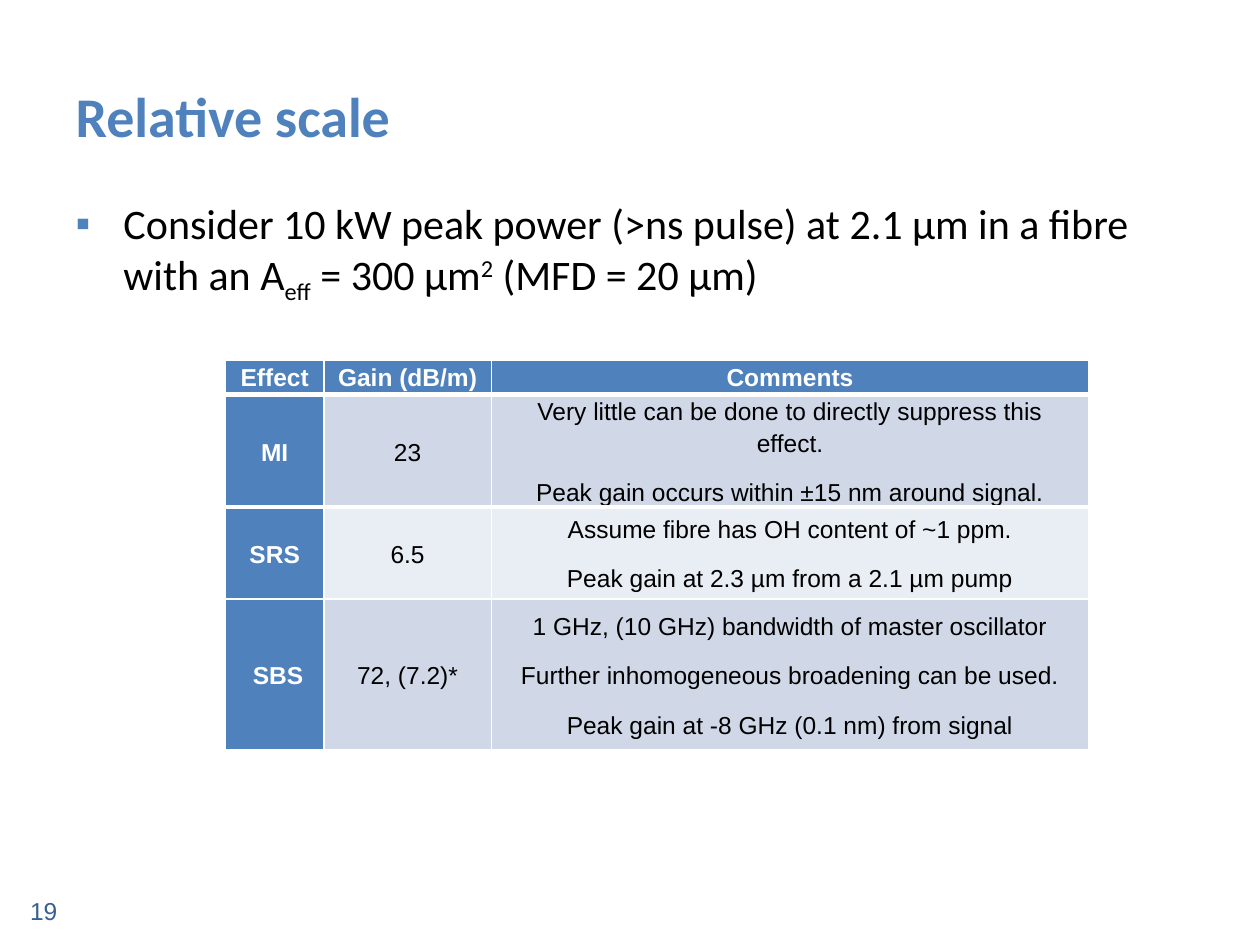
from lxml import etree
from pptx import Presentation
from pptx import util as u
from pptx.dml.color import RGBColor
from pptx.enum import text
from pptx.oxml.ns import qn

BLUE, NAVY, WHITE, BLACK = "4F81BD", "376092", "FFFFFF", "000000"
BANDS = ["D0D8E8", "E9EDF4"]


def rgb(value):
    return RGBColor.from_string(value)


def style(font, color, **formats):
    font.color.rgb = rgb(color)
    for name, value in formats.items():
        setattr(font, name, value)


prs = Presentation()
prs.slide_width, prs.slide_height = u.Inches(10), u.Inches(7.5)
s = prs.slides.add_slide(prs.slide_layouts[1])
title, body = s.shapes.title, s.placeholders[1]
number = s.shapes.add_textbox(0, 0, 0, 0)

# Position the text boxes
for sp, box in [
    (title, (0.5, 0.6, 9, 0.8)),
    (body, (0.5, 1.52, 9, 4.95)),
    (number, (0.14, 7.06, 2.33, 0.4)),
]:
    sp.left, sp.top, sp.width, sp.height = map(u.Inches, box)
    tf = sp.text_frame
    tf.word_wrap = True
    tf.auto_size = text.MSO_AUTO_SIZE.NONE
    tf.vertical_anchor = text.MSO_ANCHOR.TOP

# Title and slide number
for sp, words, color, formats in [
    (title, "Relative scale", BLUE, dict(name="Calibri", size=u.Pt(32), bold=True)),
    (number, "19", NAVY, dict(name="Arial", size=u.Pt(14))),
]:
    p = sp.text_frame.paragraphs[0]
    p.alignment = text.PP_ALIGN.LEFT
    r = p.add_run()
    r.text = words
    style(r.font, color, **formats)

# Bulleted statement with subscript and superscript
p = body.text_frame.paragraphs[0]
p.space_before = u.Pt(0)
pPr = p._p.get_or_add_pPr()
pPr.set("marL", str(u.Inches(0.38)))
pPr.set("indent", str(u.Inches(-0.38)))
bullet_color = etree.SubElement(pPr, qn("a:buClr"))
etree.SubElement(bullet_color, qn("a:srgbClr"), val=BLUE)
etree.SubElement(pPr, qn("a:buFont"), typeface="Arial")
etree.SubElement(pPr, qn("a:buChar"), char="▪")
for words, baseline in [
    ("Consider 10 kW peak power (>ns pulse) at 2.1 µm in a fibre with an A", 0),
    ("eff", -25),
    (" = 300 μm", 0),
    ("2", 30),
    (" (MFD = 20 µm)", 0),
]:
    r = p.add_run()
    r.text = words
    style(r.font, BLACK, name="Calibri", size=u.Pt(24))
    if baseline:
        r._r.get_or_add_rPr().set("baseline", str(baseline * 1000))

# Table of effects; the default table style supplies the thin white borders
rows = [
    ("Effect", "Gain (dB/m)", "Comments"),
    ("MI", "23", "Very little can be done to directly suppress this effect.\n"
                 "Peak gain occurs within ±15 nm around signal."),
    ("SRS", "6.5", "Assume fibre has OH content of ~1 ppm.\n"
                   "Peak gain at 2.3 µm from a 2.1 µm pump"),
    (" SBS", "72, (7.2)*", "1 GHz, (10 GHz) bandwidth of master oscillator\n"
                           "Further inhomogeneous broadening can be used.\n"
                           "Peak gain at -8 GHz (0.1 nm) from signal"),
]
table = s.shapes.add_table(
    len(rows), 3, u.Inches(1.79), u.Inches(2.86), u.Inches(6.85), u.Inches(2.93)
).table
table.first_col = True
for column, width in zip(table.columns, [0.78, 1.33, 4.74]):
    column.width = u.Inches(width)
for row, height in zip(table.rows, [0.27, 0.73, 0.73, 1.2]):
    row.height = u.Inches(height)

for i, row in enumerate(rows):
    for j, words in enumerate(row):
        cell = table.cell(i, j)
        heading = i == 0 or j == 0
        cell.fill.solid()
        cell.fill.fore_color.rgb = rgb(BLUE if heading else BANDS[(i - 1) % 2])
        cell.margin_left = cell.margin_right = u.Inches(0.09 if j == 2 else 0.07)
        cell.margin_top = cell.margin_bottom = 0
        cell.vertical_anchor = text.MSO_ANCHOR.MIDDLE if i else text.MSO_ANCHOR.TOP
        cell.text = words
        for k, p in enumerate(cell.text_frame.paragraphs):
            p.alignment = text.PP_ALIGN.CENTER
            p.line_spacing = 1.15
            p.space_before = u.Pt(10 if k else 0)
            style(p.runs[0].font, WHITE if heading else BLACK,
                  name="Arial", size=u.Pt(14), bold=heading)
        # Thick rule between the header and the first effect
        if i < 2:
            edge = etree.Element(qn("a:lnT" if i else "a:lnB"), w=str(u.Pt(3)))
            line_fill = etree.SubElement(edge, qn("a:solidFill"))
            etree.SubElement(line_fill, qn("a:srgbClr"), val=WHITE)
            cell._tc.get_or_add_tcPr().insert(0, edge)

prs.save("out.pptx")
